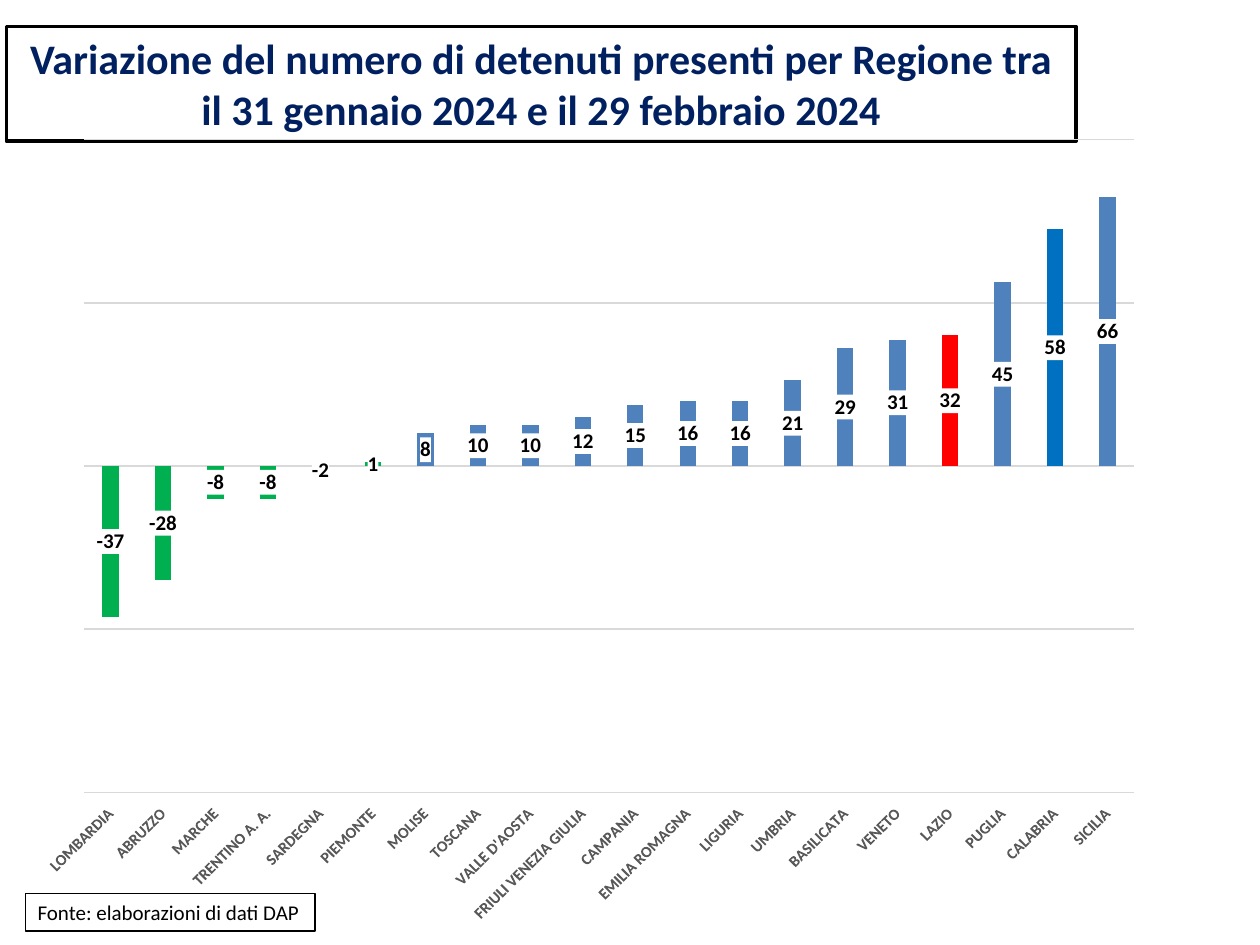
from dataclasses import dataclass

import pptx
import pptx.chart.data
import pptx.dml.color
import pptx.enum.chart
import pptx.enum.text
import pptx.oxml
import pptx.oxml.ns
import pptx.util
from pptx.util import Inches

COLORS = {
    "navy": "002060", "black": "000000", "white": "FFFFFF",
    "gray": "595959", "grid": "D9D9D9", "blue": "4F81BD",
    "green": "00B050", "red": "FF0000", "bright": "0070C0",
}
FONT = "Calibri"
NS = pptx.oxml.ns.nsdecls("a", "c")


@dataclass
class Region:
    name: str
    change: int
    color: str = "blue"


@dataclass
class Box:
    text: str
    at: tuple[float, float, float, float]
    line: float
    font: dict
    align: pptx.enum.text.PP_ALIGN
    wrap: bool


REGIONS = [
    Region("LOMBARDIA", -37, "green"), Region("ABRUZZO", -28, "green"),
    Region("MARCHE", -8, "green"), Region("TRENTINO A. A.", -8, "green"),
    Region("SARDEGNA", -2, "green"), Region("PIEMONTE", 1, "green"),
    Region("MOLISE", 8), Region("TOSCANA", 10), Region("VALLE D'AOSTA", 10),
    Region("FRIULI VENEZIA GIULIA", 12), Region("CAMPANIA", 15),
    Region("EMILIA ROMAGNA", 16), Region("LIGURIA", 16), Region("UMBRIA", 21),
    Region("BASILICATA", 29), Region("VENETO", 31), Region("LAZIO", 32, "red"),
    Region("PUGLIA", 45), Region("CALABRIA", 58, "bright"), Region("SICILIA", 66),
]
TITLE = Box(
    "Variazione del numero di detenuti presenti per Regione tra "
    "il 31 gennaio 2024 e il 29 febbraio 2024",
    (0.05, 0.21, 8.49, 0.91), 2, {"size": 24, "bold": True, "color": "navy"},
    pptx.enum.text.PP_ALIGN.CENTER, True)
SOURCE = Box(
    "Fonte: elaborazioni di dati DAP", (0.2, 7.09, 2.3, 0.3), 0.75,
    {"size": 12, "bold": False, "color": "black"},
    pptx.enum.text.PP_ALIGN.LEFT, False)


def rgb(name: str) -> pptx.dml.color.RGBColor:
    return pptx.dml.color.RGBColor.from_string(COLORS[name])


def set_font(font, size: float, bold: bool, color: str) -> None:
    values = {"name": FONT, "size": pptx.util.Pt(size), "bold": bold}
    for key, value in values.items():
        setattr(font, key, value)
    font.color.rgb = rgb(color)


def set_fill(fill, color: str) -> None:
    fill.solid()
    fill.fore_color.rgb = rgb(color)


def set_line(line, color: str, width: float) -> None:
    line.color.rgb = rgb(color)
    line.width = pptx.util.Pt(width)


def fill_box(sp, box: Box) -> None:
    sp.left, sp.top, sp.width, sp.height = map(Inches, box.at)
    set_fill(sp.fill, "white")
    set_line(sp.line, "black", box.line)
    tf = sp.text_frame
    tf.word_wrap = box.wrap
    tf.auto_size = pptx.enum.text.MSO_AUTO_SIZE.SHAPE_TO_FIT_TEXT
    tf.vertical_anchor = pptx.enum.text.MSO_ANCHOR.TOP
    p = tf.paragraphs[0]
    p.alignment = box.align
    p.space_before = pptx.util.Pt(0)
    r = p.add_run()
    r.text = box.text
    set_font(r.font, **box.font)


def set_plot_area(chart, x: float, y: float, w: float, h: float) -> None:
    area = chart._chartSpace.chart.plotArea
    for old in area.findall(pptx.oxml.ns.qn("c:layout")):
        area.remove(old)
    settings = {"layoutTarget": "inner", "xMode": "edge", "yMode": "edge",
                "x": x, "y": y, "w": w, "h": h}
    tags = "".join(f'<c:{tag} val="{val}"/>' for tag, val in settings.items())
    area.insert(0, pptx.oxml.parse_xml(
        f"<c:layout {NS}><c:manualLayout>{tags}</c:manualLayout></c:layout>"))


def style_axes(chart) -> None:
    cat = chart.category_axis
    cat.tick_label_position = pptx.enum.chart.XL_TICK_LABEL_POSITION.LOW
    cat.major_tick_mark = pptx.enum.chart.XL_TICK_MARK.NONE
    cat.has_major_gridlines = False
    set_line(cat.format.line, "grid", 0.75)
    set_font(cat.tick_labels.font, 9, True, "gray")
    cat._element.xpath("c:txPr/a:bodyPr")[0].set("rot", "-2700000")

    val = chart.value_axis
    limits = {"minimum_scale": -80, "maximum_scale": 80, "major_unit": 40,
              "has_major_gridlines": True, "visible": False}
    for key, value in limits.items():
        setattr(val, key, value)
    set_line(val.major_gridlines.format.line, "grid", 0.75)


def style_labels(plot) -> None:
    plot.has_data_labels = True
    labels = plot.data_labels
    labels.show_value = True
    labels.position = pptx.enum.chart.XL_LABEL_POSITION.CENTER
    set_font(labels.font, 12, True, "black")
    # White background behind each value
    labels._element.find(pptx.oxml.ns.qn("c:txPr")).addprevious(
        pptx.oxml.parse_xml(
            f'<c:spPr {NS}><a:solidFill><a:srgbClr val="{COLORS["white"]}"/>'
            "</a:solidFill></c:spPr>"))


def add_region_chart(s) -> None:
    data = pptx.chart.data.CategoryChartData()
    data.categories = [region.name for region in REGIONS]
    data.add_series("Series 1", [region.change for region in REGIONS])
    chart = s.shapes.add_chart(
        pptx.enum.chart.XL_CHART_TYPE.COLUMN_CLUSTERED,
        Inches(0.35), Inches(0.9), Inches(8.88), Inches(6.42), data).chart
    chart.has_legend = chart.has_title = False
    set_font(chart.font, 10, False, "black")
    set_plot_area(chart, 0.036, 0.033, 0.938, 0.815)
    style_axes(chart)

    plot = chart.plots[0]
    plot.gap_width, plot.overlap, plot.vary_by_categories = 219, -27, False
    style_labels(plot)
    series = plot.series[0]
    series.invert_if_negative = False
    set_fill(series.format.fill, "blue")
    for i, region in enumerate(REGIONS):
        if region.color != "blue":
            set_fill(series.points[i].format.fill, region.color)


def main() -> None:
    prs = pptx.Presentation()
    prs.slide_width, prs.slide_height = Inches(10), Inches(7.5)
    s = prs.slides.add_slide(prs.slide_layouts[5])

    # Title and source note
    fill_box(s.shapes.title, TITLE)
    fill_box(s.shapes.add_textbox(*map(Inches, SOURCE.at)), SOURCE)

    # Change by region
    add_region_chart(s)
    prs.save("out.pptx")


if __name__ == "__main__":
    main()
